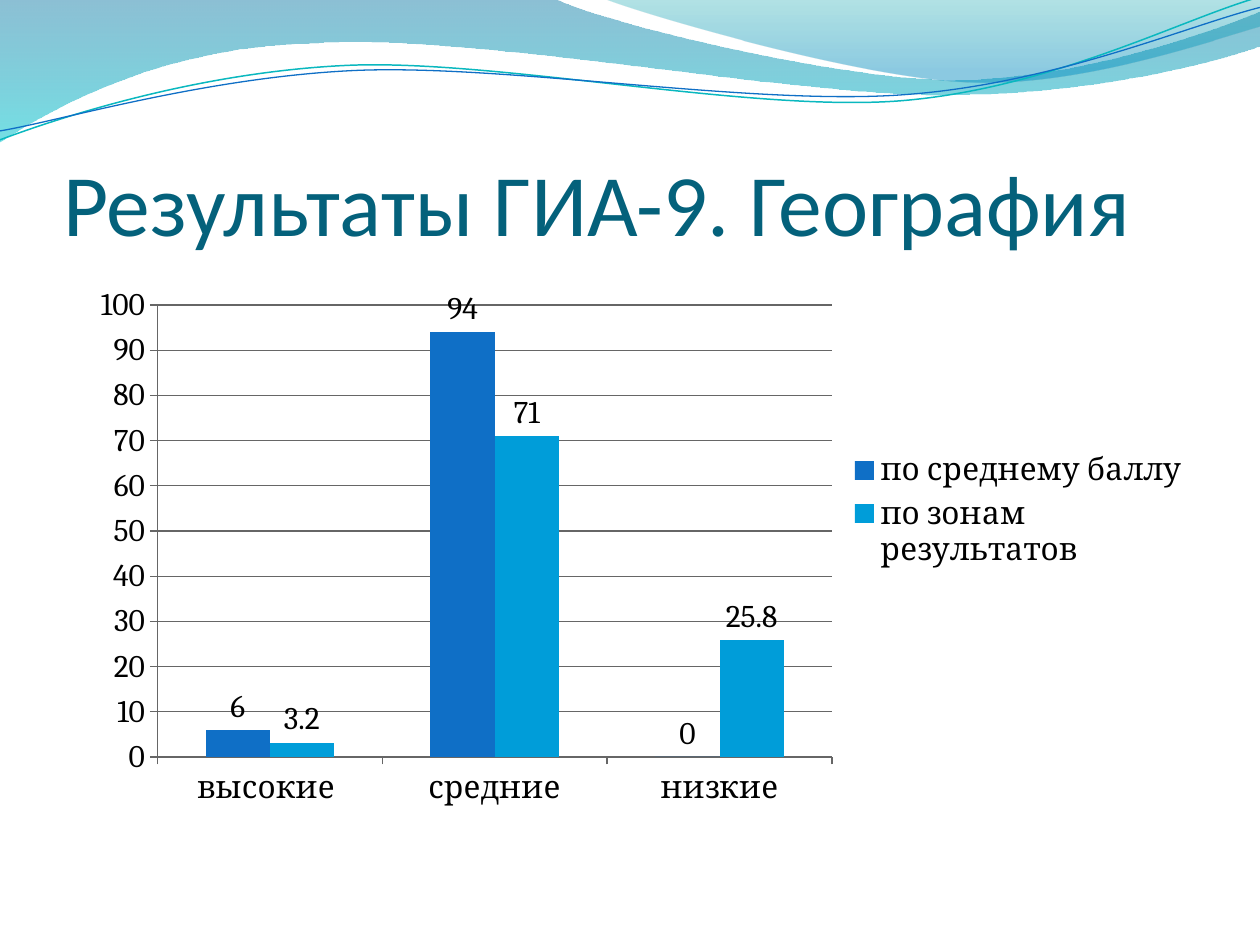
import pptx
import pptx.chart.data
import pptx.dml.color
import pptx.enum.chart
import pptx.enum.text
import pptx.oxml
import pptx.oxml.ns
import pptx.util
import lxml.etree

Cm = pptx.util.Cm
Pt = pptx.util.Pt
qn = pptx.oxml.ns.qn


def colour(value):
    return pptx.dml.color.RGBColor.from_string(value)


def draw_outline(shapes, start, segments, close):
    builder = shapes.build_freeform(Cm(start[0]), Cm(start[1]))
    builder.add_line_segments([(Cm(x), Cm(y)) for segment in segments for x, y in segment],
                              close=close)
    outline = builder.convert_to_shape()
    outline.shadow.inherit = False
    corners = iter(list(outline.element.iter(qn("a:lnTo"))))
    for segment in segments:
        corner = next(corners)
        if len(segment) == 3:
            corner.addprevious(curve := pptx.oxml.parse_xml(
                '<a:cubicBezTo xmlns:a="http://schemas.openxmlformats.org/drawingml/2006/main"/>'))
            for piece in (corner, next(corners), next(corners)):
                curve.append(piece[0])
                piece.getparent().remove(piece)
    return outline


deck = pptx.Presentation()
deck.slide_width = Cm(25.4)
deck.slide_height = Cm(19.05)
slide = deck.slides.add_slide(deck.slide_layouts[5])
slide.background.fill.solid()
slide.background.fill.fore_color.rgb = colour("FFFFFF")
decoration = []

waves = [
    ((0, 0), [
        [(11.18, -0.03)],
        [(12.09, 0.43), (16.87, 1.6), (19.25, 1.6)],
        [(21.67, 1.6), (24.33, 0.66), (25.4, 0.23)],
        [(25.43, 0.91)],
        [(24.97, 1.12), (22.1, 1.93), (18.95, 1.91)],
        [(15.8, 1.91), (9.7, 0.71), (6.53, 0.86)],
        [(3.28, 0.91), (1.17, 2.11), (-0.03, 2.87)],
        [(0, 0)],
    ], [(0, "0074A1", 45), (1, "00C6CF", 55)]),
    ((12.17, -0.03), [
        [(12.93, 0.28), (17.32, 1.57), (19.53, 1.65)],
        [(21.74, 1.75), (24.41, 0.81), (25.4, 0.53)],
        [(25.4, 0)],
        [(12.17, -0.03)],
    ], [(0, "00A1A9", 30), (0.8, "008BBF", 45)]),
]
for start, segments, stops in waves:
    wave = draw_outline(slide.shapes, start, segments, True)
    wave.line.fill.background()
    wave.fill.gradient()
    wave.fill.gradient_angle = 270
    for stop, (position, tint, _) in zip(wave.fill.gradient_stops, stops):
        stop.position = position
        stop.color.rgb = colour(tint)
    for mark, (_, _, opacity) in zip(wave.element.spPr.iter(qn("a:gs")), stops):
        lxml.etree.SubElement(mark[0], qn("a:alpha"), val=str(opacity * 1000))
    decoration.append(wave)

strands = [
    ((-0.05, 2.22), [
        [(1.19, 1.82), (4.02, 1.04), (7.05, 1.05)],
        [(10.05, 1.07), (15.02, 2.37), (18.08, 2.29)],
        [(21.13, 2.2), (23.87, 0.91), (25.41, 0.55)],
    ], "0AB8BF", 0.85),
    ((-0.04, 2.04), [
        [(1.16, 1.9), (4.18, 1.15), (7.2, 1.16)],
        [(10.25, 1.18), (15.13, 2.25), (18.18, 2.17)],
        [(21.21, 2.1), (23.93, 1.06), (25.45, 0.75)],
    ], "0F6FC6", 0.75),
]
for start, segments, tint, weight in strands:
    strand = draw_outline(slide.shapes, start, segments, False)
    strand.rotation = 357.3
    strand.fill.background()
    strand.line.color.rgb = colour(tint)
    strand.line.width = Pt(weight)
    decoration.append(strand)

master_tree = deck.slide_master.shapes.element
for order, ornament in enumerate(decoration):
    ornament.element.nvSpPr.cNvPr.set("id", str(20 + order))
    master_tree.insert(2 + order, ornament.element)

heading = slide.shapes.title
heading.left, heading.top, heading.width, heading.height = Cm(1.27), Cm(1.95), Cm(22.86), Cm(3.18)
heading_text = heading.text_frame
heading_text.auto_size = pptx.enum.text.MSO_AUTO_SIZE.NONE
heading_text.vertical_anchor = pptx.enum.text.MSO_ANCHOR.BOTTOM
heading_text.margin_left = heading_text.margin_right = heading_text.margin_bottom = 0
heading_text.margin_top = Cm(0.13)
heading_text.paragraphs[0].alignment = pptx.enum.text.PP_ALIGN.LEFT
heading_run = heading_text.paragraphs[0].add_run()
heading_run.text = "Результаты ГИА-9. География"
heading_run.font.name = "Calibri"
heading_run.font.size = Pt(50)
heading_run.font.color.rgb = colour("04617B")

results = pptx.chart.data.CategoryChartData()
results.categories = ["высокие ", "средние", "низкие"]
results.add_series("по среднему баллу", (6, 94, 0))
results.add_series("по зонам результатов ", (3.2, 71, 25.8))
chart = slide.shapes.add_chart(pptx.enum.chart.XL_CHART_TYPE.COLUMN_CLUSTERED,
                               Cm(1.39), Cm(3.57), Cm(22.86), Cm(13.44), results).chart
chart.has_title = False
chart.font.name = "Cambria"
chart.font.size = Pt(18)
chart.font.color.rgb = colour("000000")
chart.has_legend = True
chart.legend.position = pptx.enum.chart.XL_LEGEND_POSITION.RIGHT
chart.legend.include_in_layout = False

scores = chart.value_axis
scores.has_major_gridlines = True
scores.major_gridlines.format.line.color.rgb = colour("666666")
for axis in (chart.category_axis, scores):
    axis.major_tick_mark = pptx.enum.chart.XL_TICK_MARK.OUTSIDE
    axis.format.line.color.rgb = colour("666666")

columns = chart.plots[0]
columns.vary_by_categories = False
columns.gap_width = 150
columns.overlap = 0
for series, tint in zip(columns.series, ("0F6FC6", "009DD9")):
    series.format.fill.solid()
    series.format.fill.fore_color.rgb = colour(tint)
    series.data_labels.show_value = True
    series.data_labels.position = pptx.enum.chart.XL_LABEL_POSITION.OUTSIDE_END

plot_area = chart.element.find(".//" + qn("c:plotArea"))
for old_layout in plot_area.findall(qn("c:layout")):
    plot_area.remove(old_layout)
layout = lxml.etree.Element(qn("c:layout"))
manual = lxml.etree.SubElement(layout, qn("c:manualLayout"))
for tag, value in (("layoutTarget", "inner"), ("xMode", "edge"), ("yMode", "edge"),
                   ("x", "0.078"), ("y", "0.192"), ("w", "0.595"), ("h", "0.678")):
    lxml.etree.SubElement(manual, qn("c:" + tag), val=value)
plot_area.insert(0, layout)

deck.save("out.pptx")
